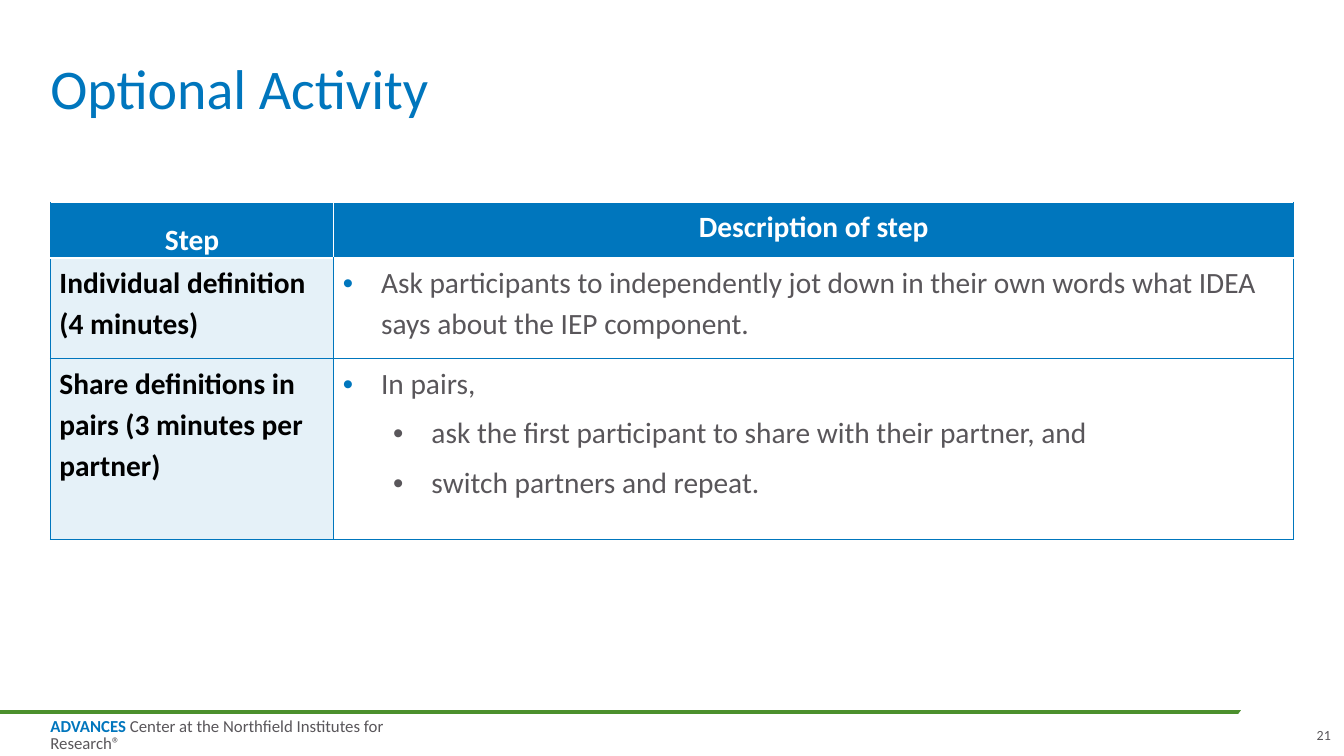
from dataclasses import dataclass

from lxml.etree import SubElement as Sub
from pptx import Presentation
from pptx.dml.color import RGBColor as Rgb
from pptx.enum.shapes import MSO_CONNECTOR as Connector, MSO_SHAPE as Preset
from pptx.enum.text import MSO_ANCHOR as Anchor, PP_ALIGN as Align
from pptx.oxml.ns import qn
from pptx.util import Inches, Pt

TITLE = "Optional Activity"
HEADINGS = ["Step", "Description of step"]
STEPS = [
    ("Individual definition (4 minutes)",
     [(0, "Ask participants to independently jot down in their own words "
          "what IDEA says about the IEP component.")]),
    ("Share definitions in pairs (3 minutes per partner)",
     [(0, "In pairs,"),
      (1, "ask the first participant to share with their partner, and"),
      (1, "switch partners and repeat.")]),
]
CENTER = "ADVANCES"
INSTITUTE = " Center at the Northfield Institutes for Research®"
PAGE = "21"


@dataclass(frozen=True)
class Theme:
    font: str = "Calibri"
    blue: str = "0076BD"
    pale: str = "E5F1F8"
    green: str = "4C902D"
    gray: str = "59565A"
    white: str = "FFFFFF"
    black: str = "000000"
    title: int = 40
    body: int = 21
    footer: int = 12
    page: int = 10


THEME = Theme()
COLUMN_WIDTHS = [2.81, 9.52]
ROW_HEIGHTS = [0.55, 1, 1.79]
TABLE_LEFT, TABLE_TOP = 0.5, 2.01
HANGING, LEVEL_STEP = 0.38, 0.5


def write(paragraph, text, *, size=THEME.body, color=THEME.gray, bold=False,
          align=Align.LEFT, spacing=None, before=0, after=0):
    paragraph.alignment = align
    paragraph.space_before, paragraph.space_after = Pt(before), Pt(after)
    if spacing:
        paragraph.line_spacing = spacing
    run = paragraph.add_run()
    run.text = text
    run.font.name, run.font.size, run.font.bold = THEME.font, Pt(size), bold
    run.font.color.rgb = Rgb.from_string(color)


def add_box(slide, left, top, width, height, *, anchor=Anchor.TOP, wrap=False):
    frame = slide.shapes.add_textbox(*map(Inches, (left, top, width, height))).text_frame
    frame.margin_left = frame.margin_top = frame.margin_right = frame.margin_bottom = 0
    frame.vertical_anchor, frame.word_wrap = anchor, wrap
    return frame.paragraphs[0]


def add_bullet(paragraph, level):
    properties = paragraph._p.get_or_add_pPr()
    properties.set("marL", str(Inches(HANGING + level * LEVEL_STEP)))
    properties.set("indent", str(-Inches(HANGING)))
    if level == 0:
        Sub(Sub(properties, qn("a:buClr")), qn("a:srgbClr"), val=THEME.blue)
    Sub(properties, qn("a:buFont"), typeface="Arial")
    Sub(properties, qn("a:buChar"), char="•")


def format_cell(cell, fill, borders, anchor=Anchor.TOP):
    cell.margin_left = cell.margin_right = Inches(0.09)
    cell.margin_top, cell.margin_bottom = Inches(0.02), 0
    cell.vertical_anchor = anchor
    properties = cell._tc.get_or_add_tcPr()
    for side, color in zip("LRTB", borders):
        edge = Sub(properties, qn(f"a:ln{side}"), w=str(Pt(1)))
        Sub(Sub(edge, qn("a:solidFill")), qn("a:srgbClr"), val=color)
    if fill:
        cell.fill.solid()
        cell.fill.fore_color.rgb = Rgb.from_string(fill)
    else:
        cell.fill.background()


def add_footer(slide):
    rule = slide.shapes.add_connector(
        Connector.STRAIGHT, 0, Inches(7.06), Inches(13), Inches(7.06))
    rule.line.color.rgb, rule.line.width = Rgb.from_string(THEME.green), Pt(3)
    Sub(rule._element.spPr, qn("a:effectLst"))

    credit = add_box(slide, 0.5, 7.13, 4.02, 0.17)
    write(credit, CENTER, size=THEME.footer, color=THEME.blue, bold=True, spacing=0.85)
    write(credit, INSTITUTE, size=THEME.footer, spacing=0.85)

    rule_end = slide.shapes.add_shape(
        Preset.OVAL, *map(Inches, (12.16, 6.77, 1.19, 0.58)))
    rule_end.rotation = 332.1
    rule_end.shadow.inherit = False
    rule_end.fill.solid()
    rule_end.fill.fore_color.rgb = Rgb.from_string(THEME.white)
    rule_end.line.fill.background()


def add_steps(slide):
    table = slide.shapes.add_table(
        len(ROW_HEIGHTS), len(COLUMN_WIDTHS), Inches(TABLE_LEFT), Inches(TABLE_TOP),
        Inches(sum(COLUMN_WIDTHS)), Inches(sum(ROW_HEIGHTS))).table
    table.horz_banding = False
    for column, width in zip(table.columns, COLUMN_WIDTHS):
        column.width = Inches(width)
    for row, height in zip(table.rows, ROW_HEIGHTS):
        row.height = Inches(height)

    blue, white = THEME.blue, THEME.white
    sides = [(blue, white), (white, blue)]
    anchors = [Anchor.BOTTOM, Anchor.TOP]
    for column, heading in enumerate(HEADINGS):
        cell = table.cell(0, column)
        format_cell(cell, blue, (*sides[column], white, white), anchors[column])
        write(cell.text_frame.paragraphs[0], heading, color=white, bold=True,
              align=Align.CENTER, spacing=1.15, after=3)

    for row, (step, points) in enumerate(STEPS, 1):
        borders = (blue, blue, white if row == 1 else blue, blue)
        name, description = table.cell(row, 0), table.cell(row, 1)
        format_cell(name, THEME.pale, borders)
        write(name.text_frame.paragraphs[0], step, color=THEME.black, bold=True,
              spacing=1.15, after=3)
        format_cell(description, None, borders)
        frame = description.text_frame
        for index, (level, point) in enumerate(points):
            paragraph = frame.add_paragraph() if index else frame.paragraphs[0]
            add_bullet(paragraph, level)
            write(paragraph, point, spacing=1.15, before=3 if index else 0, after=3)


def main():
    deck = Presentation()
    deck.slide_width, deck.slide_height = Inches(13.33), Inches(7.5)
    slide = deck.slides.add_slide(deck.slide_layouts[6])
    add_footer(slide)
    write(add_box(slide, 0.5, 0, 12.4, 1.21, anchor=Anchor.BOTTOM, wrap=True),
          TITLE, size=THEME.title, color=THEME.blue, spacing=0.9)
    add_steps(slide)
    write(add_box(slide, 13.03, 7.2, 0.17, 0.17, anchor=Anchor.BOTTOM),
          PAGE, size=THEME.page, align=Align.RIGHT)
    deck.save("out.pptx")


if __name__ == "__main__":
    main()
